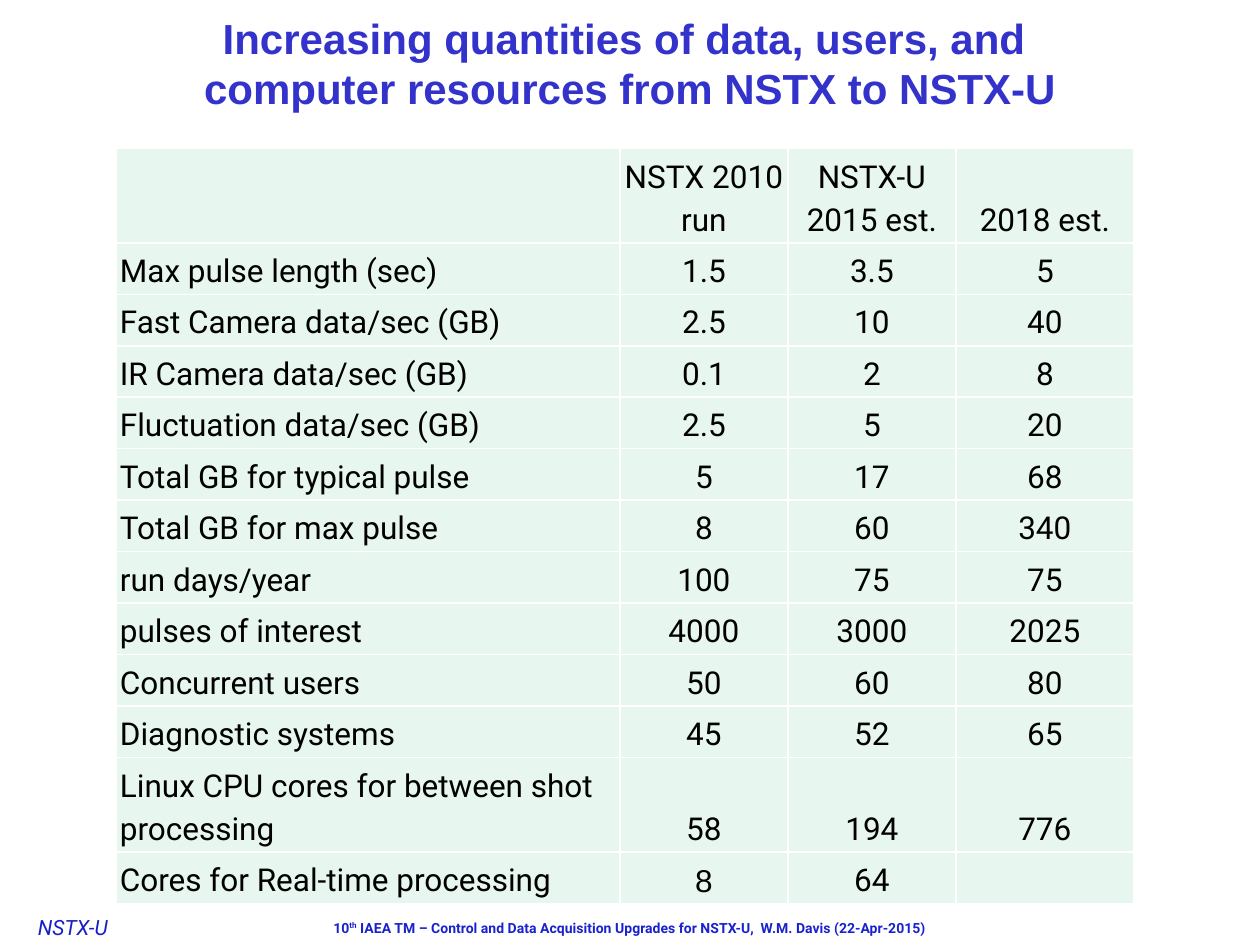
from lxml.etree import SubElement
from pptx import Presentation
from pptx.dml.color import RGBColor
from pptx.enum.text import MSO_ANCHOR as Anchor, PP_ALIGN as Align
from pptx.oxml.ns import qn
from pptx.util import Pt

PX = 914400 // 126
MINT, WHITE, BLACK = "E7F6EF", "FFFFFF", "000000"

COLUMN_WIDTHS = [504, 168, 168, 178]
HEADER_HEIGHT, ROW_HEIGHT, TALL_ROW_HEIGHT = 94, 49, 92
ROWS = [
    ("", "NSTX 2010 run", "NSTX-U 2015 est.", "2018 est."),
    ("Max pulse length (sec)", "1.5", "3.5", "5"),
    ("Fast Camera data/sec (GB)", "2.5", "10", "40"),
    ("IR Camera data/sec (GB)", "0.1", "2", "8"),
    ("Fluctuation data/sec (GB)", "2.5", "5", "20"),
    ("Total GB for typical pulse", "5", "17", "68"),
    ("Total GB for max pulse", "8", "60", "340"),
    ("run days/year", "100", "75", "75"),
    ("pulses of interest", "4000", "3000", "2025"),
    ("Concurrent users", "50", "60", "80"),
    ("Diagnostic systems", "45", "52", "65"),
    ("Linux CPU cores for between shot processing", "58", "194", "776"),
    ("Cores for Real-time processing", "8", "64", ""),
]
TALL_ROW = 11
ARIAL_CELL = (12, 1)


def px(length):
    return length * PX


def color(value):
    return RGBColor.from_string(value)


def set_font(font, name, size, value, bold=False, italic=False):
    font.name, font.size = name, Pt(size)
    font.bold, font.italic = bold, italic
    font.color.rgb = color(value)


def add_text(slide, box, runs, font, align=Align.CENTER, anchor=Anchor.TOP, inset=None):
    """Add one paragraph; runs are (text, baseline in thousandths of a percent)."""
    shape = slide.shapes.add_textbox(*map(px, box))
    frame = shape.text_frame
    frame.word_wrap = True
    frame.vertical_anchor = anchor
    if inset is not None:
        frame.margin_left = frame.margin_right = px(inset)
        frame.margin_top = frame.margin_bottom = px(inset)
    paragraph = frame.paragraphs[0]
    paragraph.alignment = align
    set_font(paragraph.font, *font)
    for index, (text, baseline) in enumerate(runs):
        lines = text.split("\n")
        for number, line in enumerate(lines):
            if number:
                paragraph.add_line_break()
            run = paragraph.add_run()
            run.text = line
            set_font(run.font, *font)
            if baseline:
                run._r.get_or_add_rPr().set("baseline", str(baseline))


def set_borders(cell, value, width):
    properties = cell._tc.get_or_add_tcPr()
    for side in ("a:lnL", "a:lnR", "a:lnT", "a:lnB"):
        line = SubElement(properties, qn(side), w=str(Pt(width)))
        fill = SubElement(line, qn("a:solidFill"))
        SubElement(fill, qn("a:srgbClr"), val=value)


def fill_cell(cell, text, align, font_name):
    set_borders(cell, WHITE, 1)
    cell.fill.solid()
    cell.fill.fore_color.rgb = color(MINT)
    cell.vertical_anchor = Anchor.BOTTOM
    cell.margin_left = cell.margin_right = px(4)
    cell.margin_top = cell.margin_bottom = px(4)
    cell.text = text
    paragraph = cell.text_frame.paragraphs[0]
    paragraph.alignment = align
    paragraph.line_spacing = 1.15
    set_font(paragraph.font, font_name, 18, BLACK)


def add_resource_table(slide, left, top):
    heights = [ROW_HEIGHT] * len(ROWS)
    heights[0], heights[TALL_ROW] = HEADER_HEIGHT, TALL_ROW_HEIGHT
    table = slide.shapes.add_table(
        len(ROWS), len(COLUMN_WIDTHS), px(left), px(top),
        px(sum(COLUMN_WIDTHS)), px(sum(heights))).table
    table.first_row = table.horz_banding = False
    for column, width in zip(table.columns, COLUMN_WIDTHS):
        column.width = px(width)
    for row, height in zip(table.rows, heights):
        row.height = px(height)
    for i, values in enumerate(ROWS):
        for j, text in enumerate(values):
            align = Align.CENTER if j else Align.LEFT
            font_name = "Arial" if (i, j) == ARIAL_CELL else "Roboto"
            fill_cell(table.cell(i, j), text, align, font_name)


def main():
    presentation = Presentation()
    presentation.slide_width, presentation.slide_height = px(1260), px(945)
    slide = presentation.slides.add_slide(presentation.slide_layouts[6])

    add_text(slide, (38, 915, 110, 25), [("NSTX-U", 0)],
             ("Roboto", 12, "171FC7", False, True), align=Align.LEFT, inset=0)
    footer = [
        ("10", 0),
        ("th", 30000),
        (" IAEA TM – Control and Data Acquisition Upgrades for NSTX-U,  W.M. Davis (22-Apr-2015)", 0),
    ]
    add_text(slide, (252, 913, 756, 30), footer, ("Roboto", 8, "1822CD", True))
    title = "Increasing quantities of data, users, and \ncomputer resources from NSTX to NSTX-U"
    add_text(slide, (0, 0, 1260, 126), [(title, 0)],
             ("Arial", 24, "3333CC", True), anchor=Anchor.MIDDLE)
    add_resource_table(slide, 116, 148)

    presentation.save("out.pptx")


if __name__ == "__main__":
    main()
